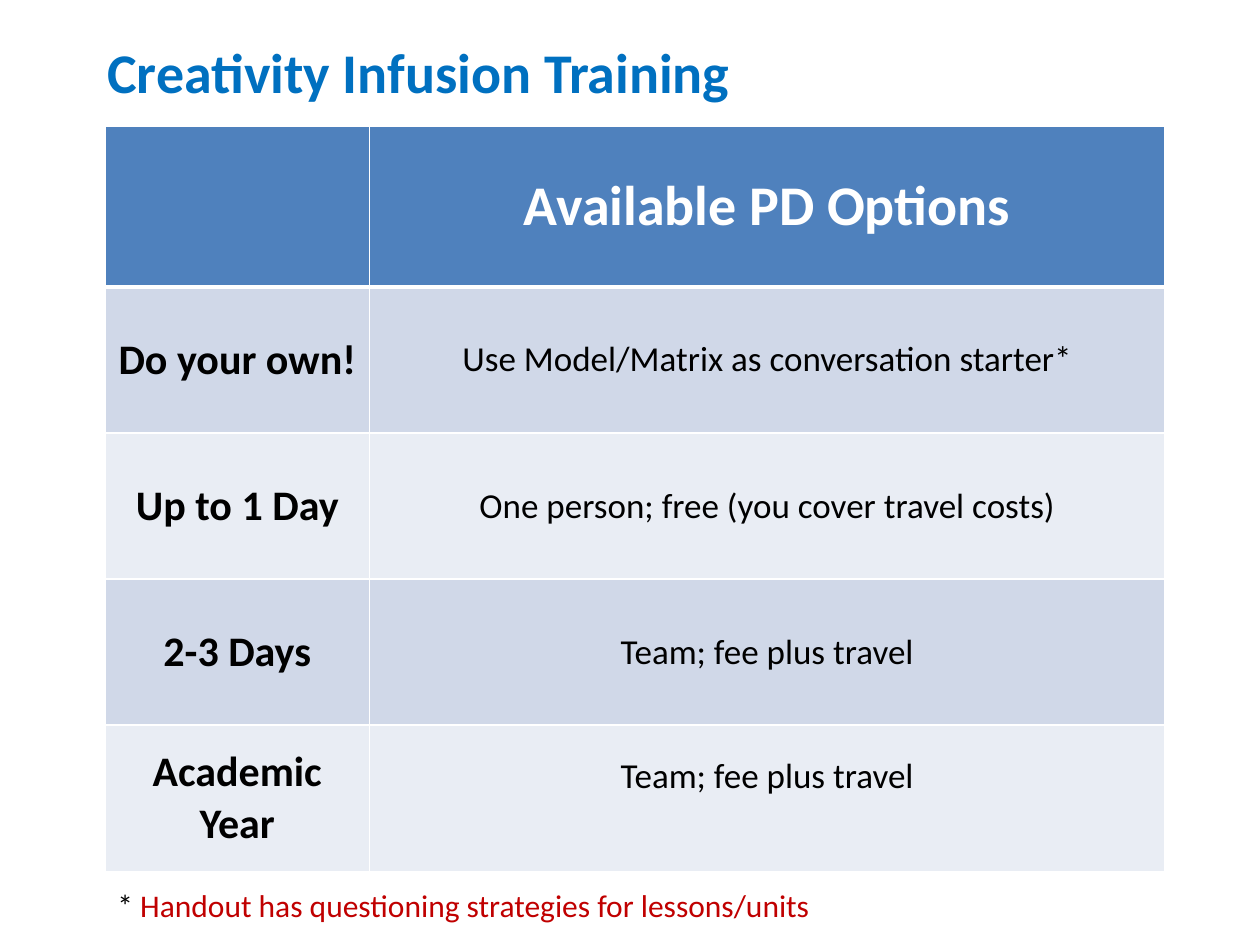
from dataclasses import dataclass

from pptx import Presentation
from pptx.dml.color import RGBColor
from pptx.enum.text import MSO_ANCHOR, MSO_AUTO_SIZE, PP_ALIGN
from pptx.oxml import parse_xml
from pptx.oxml.ns import nsdecls
from pptx.util import Pt


@dataclass(frozen=True)
class Theme:
    font: str = "Calibri"
    title: str = "0070C0"
    header: str = "4F81BD"
    bands: tuple = ("D0D8E8", "E9EDF4")
    white: str = "FFFFFF"
    black: str = "000000"
    note: str = "C00000"
    heading_size: int = 32
    label_size: int = 24
    body_size: int = 20
    note_size: int = 18


theme = Theme()


def write(paragraph, text, *, size, color, bold=False, align=PP_ALIGN.LEFT):
    paragraph.alignment = align
    run = paragraph.add_run()
    run.text = text
    run.font.name = theme.font
    run.font.size = Pt(size)
    run.font.bold = bold
    run.font.color.rgb = RGBColor.from_string(color)


def add_borders(cell, **widths):
    """Draw white cell edges; the keys are L, R, T and B, in that order."""
    for side, width in widths.items():
        cell._tc.get_or_add_tcPr().append(parse_xml(
            f'<a:ln{side} {nsdecls("a")} w="{Pt(width)}"><a:solidFill>'
            f'<a:srgbClr val="{theme.white}"/></a:solidFill></a:ln{side}>'))


presentation = Presentation()
presentation.slide_width, presentation.slide_height = Pt(720), Pt(540)
slide = presentation.slides.add_slide(presentation.slide_layouts[5])

# Title
title = slide.shapes.title
title.left, title.top, title.width, title.height = Pt(54), Pt(18), Pt(374), Pt(46)
title.text_frame.word_wrap = False
title.text_frame.auto_size = MSO_AUTO_SIZE.NONE
title.text_frame.vertical_anchor = MSO_ANCHOR.TOP
write(title.text_frame.paragraphs[0], "Creativity Infusion Training",
      size=theme.heading_size, color=theme.title, bold=True)

# Training options
options = [
    ("", "Available PD Options"),
    ("Do your own!", "Use Model/Matrix as conversation starter*"),
    ("Up to 1 Day", "One person; free (you cover travel costs)"),
    ("2-3 Days", "Team; fee plus travel"),
    ("Academic Year", "Team; fee plus travel"),
]
column_widths = (151.2, 454.5)
header_height, row_height = 92, 83.5
table = slide.shapes.add_table(
    len(options), 2, Pt(60), Pt(72), Pt(sum(column_widths)),
    Pt(header_height + 4 * row_height)).table
for column, width in zip(table.columns, column_widths):
    column.width = Pt(width)

for row_index, texts in enumerate(options):
    is_header = row_index == 0
    table.rows[row_index].height = Pt(header_height if is_header else row_height)
    fill = theme.header if is_header else theme.bands[(row_index - 1) % 2]
    for column_index, text in enumerate(texts):
        cell = table.cell(row_index, column_index)
        add_borders(cell, L=1, R=1, T=3 if row_index == 1 else 1,
                    B=3 if is_header else 1)
        cell.fill.solid()
        cell.fill.fore_color.rgb = RGBColor.from_string(fill)
        cell.vertical_anchor = MSO_ANCHOR.MIDDLE
        if not text:
            continue
        body_size = theme.label_size if column_index == 0 else theme.body_size
        write(cell.text_frame.paragraphs[0], text,
              size=theme.heading_size if is_header else body_size,
              color=theme.white if is_header else theme.black,
              bold=is_header or column_index == 0, align=PP_ALIGN.CENTER)

# The last option sits one line above the middle of its row
table.cell(len(options) - 1, 1).margin_bottom = Pt(28)

# Footnote
footnote = slide.shapes.add_textbox(Pt(60), Pt(502.5), Pt(415), Pt(29))
footnote.text_frame.word_wrap = False
for text, color in (("* ", theme.black),
                    ("Handout has questioning strategies for lessons/units", theme.note)):
    write(footnote.text_frame.paragraphs[0], text, size=theme.note_size, color=color)

presentation.save("out.pptx")
